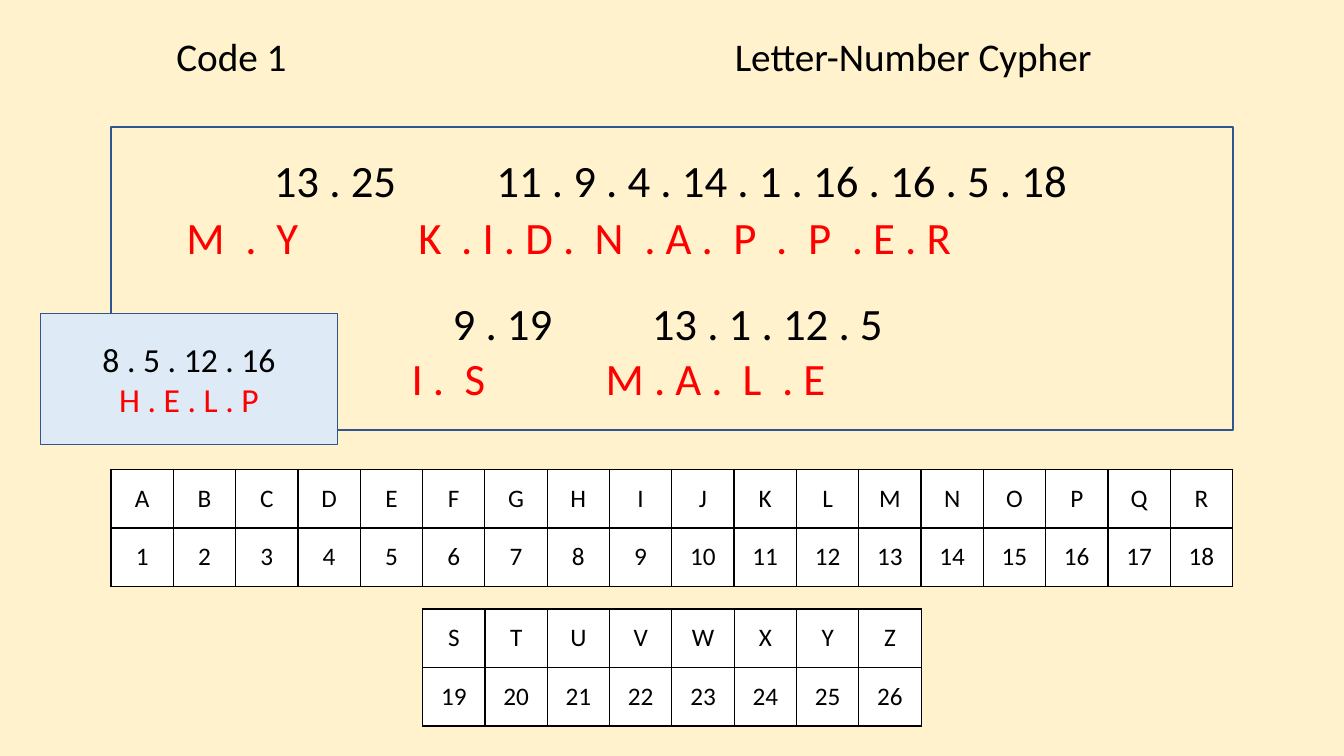
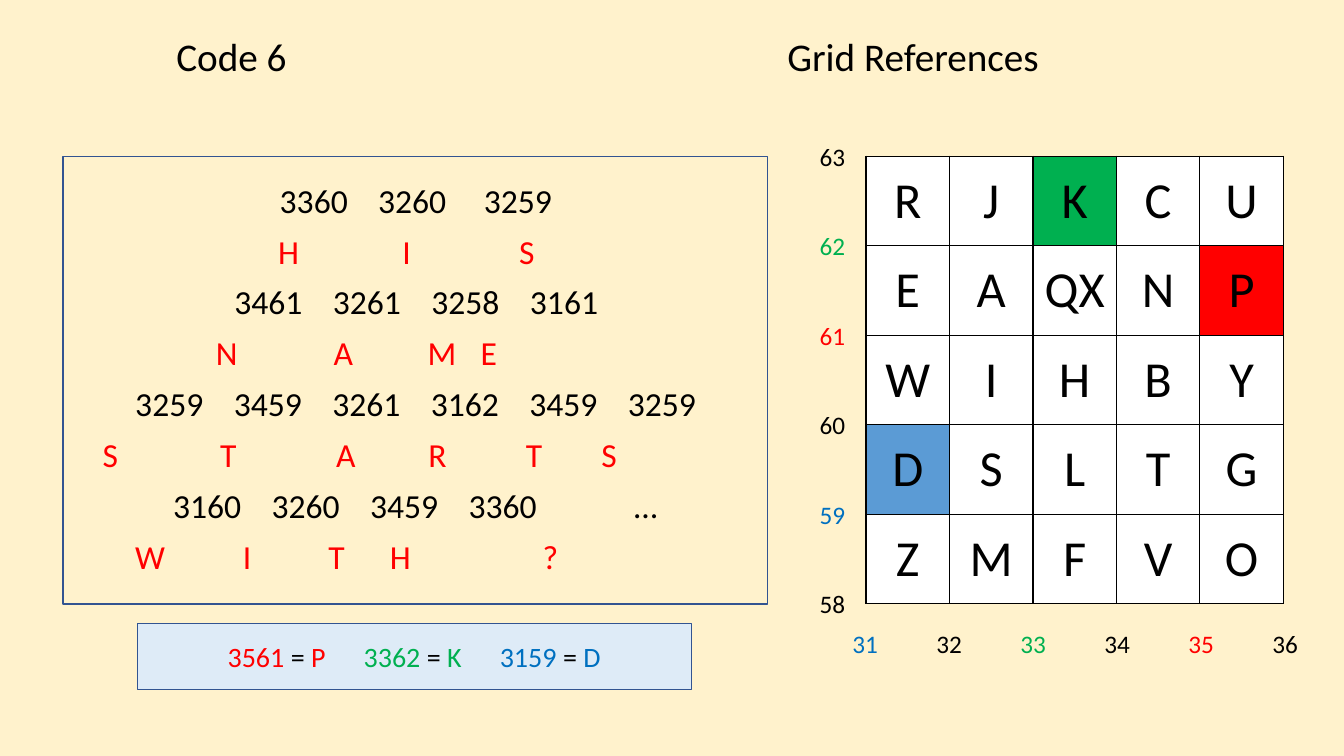
from lxml import etree
from pptx import Presentation
from pptx.dml.color import RGBColor
from pptx.enum.shapes import MSO_SHAPE
from pptx.enum.text import MSO_ANCHOR, MSO_AUTO_SIZE, PP_ALIGN
from pptx.oxml.ns import qn
from pptx.util import Inches, Pt

RECT = MSO_SHAPE.RECTANGLE
TOP, MIDDLE = MSO_ANCHOR.TOP, MSO_ANCHOR.MIDDLE
LEFT, CENTER = PP_ALIGN.LEFT, PP_ALIGN.CENTER
FIXED = MSO_AUTO_SIZE.NONE

FONT = "Calibri"
COLS, ROWS = 160, 90  # square grid cells, 12 to the inch
HEX = {
    "cream": "FFF2CC", "pale": "DEEBF7", "edge": "325491",
    "black": "000000", "white": "FFFFFF", "red": "FF0000",
    "green": "00B050", "blue": "0070C0", "sky": "5B9BD5",
}


def unit(n):
    return Inches(n / 12)


def rgb(name):
    return RGBColor.from_string(HEX[name])


class Deck:
    def __init__(self):
        self.prs = Presentation()
        self.prs.slide_width, self.prs.slide_height = unit(COLS), unit(ROWS)
        back = self.prs.slide_master.background.fill
        back.solid()
        back.fore_color.rgb = rgb("cream")
        self.slide = None

    def page(self, code, name):
        """Start a slide with its code number and the name of the code."""
        self.slide = self.prs.slides.add_slide(self.prs.slide_layouts[5])
        title = self.slide.shapes.title
        title.left, title.top = unit(3.2), unit(3.2)
        title.width, title.height = unit(48.7), unit(6.9)
        self.fill(title, [[(code, "black")]], 28)
        self.label((61.7, 3.2, 94, 6.9), name, 28)

    def run(self, para, text, size, color):
        run = para.add_run()
        run.text = text
        run.font.name, run.font.size = FONT, Pt(size)
        run.font.color.rgb = rgb(color)

    def fill(self, shape, lines, size, anchor=TOP):
        """Write centred lines, each a list of (text, colour) runs."""
        frame = shape.text_frame
        frame.word_wrap, frame.auto_size = True, FIXED
        frame.vertical_anchor = anchor
        for i, runs in enumerate(lines):
            para = frame.add_paragraph() if i else frame.paragraphs[0]
            para.alignment = CENTER
            for text, color in runs:
                self.run(para, text, size, color)

    def box(self, area):
        return self.slide.shapes.add_textbox(*map(unit, area))

    def label(self, area, text, size, color="black"):
        self.fill(self.box(area), [[(text, color)]], size)

    def panel(self, area, color):
        shape = self.slide.shapes.add_shape(RECT, *map(unit, area))
        shape.shadow.inherit = False
        shape.fill.solid()
        shape.fill.fore_color.rgb = rgb(color)
        shape.line.color.rgb = rgb("edge")
        shape.line.width = Pt(1)
        return shape

    def tabs(self, shape, words, size):
        """Set words, given as (column, runs), on tab stops."""
        frame = shape.text_frame
        frame.word_wrap = True
        frame.margin_left = frame.margin_right = 0
        para = frame.paragraphs[0]
        para.alignment = LEFT
        stops = etree.SubElement(para._p.get_or_add_pPr(), qn("a:tabLst"))
        for x, runs in words:
            pos = unit(x) - shape.left
            etree.SubElement(stops, qn("a:tab"), pos=str(pos), algn="l")
            for i, (text, color) in enumerate(runs):
                self.run(para, text if i else "\t" + text, size, color)

    def line(self, area, text, cols, size, color):
        """Set one line whose parts, split at bars, start at given columns."""
        words = [(x, [(part, color)]) for x, part in zip(cols, text.split("|"))]
        self.tabs(self.box(area), words, size)

    def table(self, x, y, wide, high, rows, size, marks=None):
        marks = marks or {}
        count = len(rows[0])
        area = (x, y, wide * count, high * len(rows))
        table = self.slide.shapes.add_table(
            len(rows), count, *map(unit, area)).table
        table.first_row = table.horz_banding = False
        for col in table.columns:
            col.width = unit(wide)
        for r, row in enumerate(rows):
            table.rows[r].height = unit(high)
            for c, text in enumerate(row):
                self.cell(table.cell(r, c), text, size, marks.get(text, "white"))

    def cell(self, cell, text, size, color):
        cell.vertical_anchor = MIDDLE
        cell.fill.solid()
        cell.fill.fore_color.rgb = rgb(color)
        para = cell.text_frame.paragraphs[0]
        para.alignment = CENTER
        self.run(para, text, size, "black")
        props = cell._tc.get_or_add_tcPr()
        for i, side in enumerate("LRTB"):
            edge = etree.Element(qn("a:ln" + side), w=str(Pt(1)))
            paint = etree.SubElement(edge, qn("a:solidFill"))
            etree.SubElement(paint, qn("a:srgbClr"), val=HEX["black"])
            props.insert(i, edge)


def letters(deck):
    deck.page("Code 1", "Letter-Number Cypher")

    # Message and its answer
    deck.panel((13.2, 15.1, 133.6, 36.1), "cream")
    lines = [
        ((13.2, 17.6, 133.6, 7.7), "black", [32.6, 59.1],
         "13 . 25|11 . 9 . 4 . 14 . 1 . 16 . 16 . 5 . 18"),
        ((19.8, 24.4, 125.4, 7.7), "red",
         [22.2, 29.2, 32.9, 49.8, 54.9, 70.8, 76.7, 87.3, 92.4, 96.2, 101.4],
         "M|.|Y|K|. I . D .|N|. A .|P|.|P|. E . R"),
        ((46.6, 34.6, 66, 7.7), "black", [53.9, 77.6],
         "9 . 19|13 . 1 . 12 . 5"),
        ((47.8, 41.2, 66, 7.7), "red", [49, 55.3, 72.1, 88.4, 93.1],
         "I .|S|M . A .|L|. E"),
    ]
    for area, color, cols, text in lines:
        deck.line(area, text, cols, 32, color)

    # Example
    note = deck.panel((4.8, 37.3, 35.4, 15.6), "pale")
    deck.fill(note, [[("8 . 5 . 12 . 16", "black")],
                     [("H . E . L . P", "red")]], 24, MIDDLE)

    # Alphabet, in two centred tables
    wide, first = 7.42, 1
    for y, names in ((55.9, "ABCDEFGHIJKLMNOPQR"), (72.5, "STUVWXYZ")):
        count = len(names)
        nums = [str(first + i) for i in range(count)]
        deck.table((COLS - wide * count) / 2, y, wide, 6.96, [names, nums], 18)
        first += count


def grid(deck):
    deck.page("Code 6", "Grid References")

    # Letter grid
    high = 10.66
    rows = [row.split() for row in
            ("R J K C U", "E A QX N P", "W I H B Y", "D S L T G", "Z M F V O")]
    marks = {"K": "green", "P": "red", "D": "sky"}
    deck.table(103.1, 18.6, 9.94, high, rows, 36, marks)

    # Axis numbers
    tints = {31: "blue", 33: "green", 35: "red",
             59: "blue", 61: "red", 62: "green"}
    for i in range(6):
        for num, x, y in ((31 + i, 99.7 + 10 * i, 74.2),
                          (58 + i, 95.8, 69.5 - high * i)):
            deck.label((x, y, 6.6, 4.8), str(num), 18, tints.get(num, "black"))

    # Message and its answer, line by line
    deck.panel((7.5, 18.6, 83.9, 53.3), "cream")
    step = 11.73
    lines = [
        ("3360|3260|3259", [33.3, 45, 57.6]),
        ("H|I|S", [33.1, 47.9, 61.8]),
        ("3461|3261|3258|3161", [27.9 + step * i for i in range(4)]),
        ("N|A|M|E", [25.7, 39.7, 50.9, 57.2]),
        ("3259|3459|3261|3162|3459|3259", [16.1 + step * i for i in range(6)]),
        ("S|T|A|R|T|S", [12.2, 26.2, 40, 51, 62.6, 71.6]),
        ("3160|3260|3459|3360|…", [20.6 + step * i for i in range(4)] + [75.5]),
        ("W|I|T|H|?", [16.1, 28.9, 39.1, 46.4, 64.6]),
    ]
    for i, (text, cols) in enumerate(lines):
        area = (7.5, 20.8 + 6.05 * i, 83.9, 6)
        deck.line(area, text, cols, 24, "red" if i % 2 else "black")

    # Key
    key = deck.panel((16.4, 74.2, 65.9, 7.9), "pale")
    pairs = [("3561", "P", "red"), ("3362", "K", "green"), ("3159", "D", "blue")]
    words = [(27.1 + 16.2 * i, [(num + " ", tint), ("=", "black"), (" " + name, tint)])
             for i, (num, name, tint) in enumerate(pairs)]
    deck.tabs(key, words, 20)


def main():
    deck = Deck()
    letters(deck)
    grid(deck)
    deck.prs.save("out.pptx")


if __name__ == "__main__":
    main()
